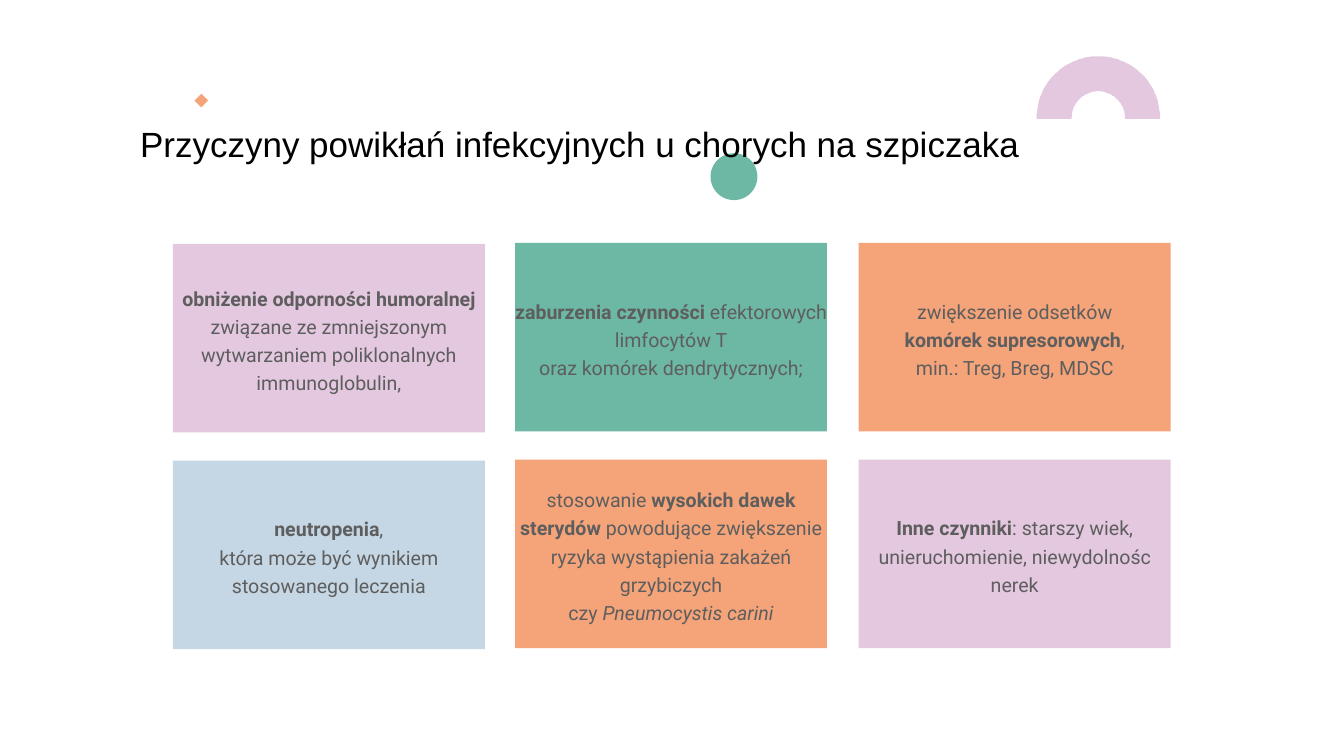
import math

import pptx
import pptx.dml.color
import pptx.enum.shapes
import pptx.enum.text
import pptx.util

PX = 9144

THEME = {
    "pink": "E4C8E0", "green": "6DB8A4", "orange": "F5A479", "blue": "C5D6E4",
    "title": "000000", "text": "5E5E5E",
    "title_font": "Arial", "card_font": "Roboto",
    "title_size": 50, "card_size": 28,
}

TITLE = "Przyczyny powikłań infekcyjnych u chorych na szpiczaka"

CARDS = [
    ("pink", [[("obniżenie odporności humoralnej ", "b"),
               ("związane ze zmniejszonym wytwarzaniem poliklonalnych", "")],
              [("immunoglobulin,", "")]]),
    ("green", [[("zaburzenia czynności ", "b"), ("efektorowych limfocytów T", "")],
               [("oraz komórek dendrytycznych;", "")]]),
    ("orange", [[("zwiększenie odsetków\n", ""), ("komórek supresorowych", "b"),
                 (",\nmin.: Treg, Breg, MDSC", "")]]),
    ("blue", [[("neutropenia", "b"),
               (",\nktóra może być wynikiem stosowanego leczenia", "")]]),
    ("orange", [[("stosowanie ", ""), ("wysokich dawek sterydów ", "b"),
                 ("powodujące zwiększenie ryzyka wystąpienia zakażeń grzybiczych", "")],
                [("czy ", ""), ("Pneumocystis carini", "i")]]),
    ("pink", [[("Inne czynniki", "b"),
               (": starszy wiek, unieruchomienie, niewydolnośc nerek", "")]]),
]

COLUMNS = [(343, 2), (1022, 0), (1704, 0)]
ROWS = [482, 912]
CARD_W, CARD_H = 619, 374
ARCH = {"cx": 2179.5, "cy": 2 * 117, "outer": 122.5, "inner": 53, "foot": 2}

SHAPES = pptx.enum.shapes.MSO_SHAPE
ALIGN = pptx.enum.text.PP_ALIGN


def rgb(name):
    return pptx.dml.color.RGBColor.from_string(THEME[name])


def paint(sp, color):
    sp.shadow.inherit = False
    sp.fill.solid()
    sp.fill.fore_color.rgb = rgb(color)
    sp.line.fill.background()


def add_shape(s, kind, x, y, w, h, color):
    sp = s.shapes.add_shape(kind, x * PX, y * PX, w * PX, h * PX)
    paint(sp, color)
    return sp


def add_arch(s, cx, cy, outer, inner, foot, color):
    def arc(radius):
        points = [(cx + radius * math.cos(math.radians(a)),
                   cy - radius * math.sin(math.radians(a))) for a in range(180, -1, -3)]
        return [(cx - radius, cy + foot), *points, (cx + radius, cy + foot)]

    points = arc(outer) + arc(inner)[::-1]
    builder = s.shapes.build_freeform(*points[0], scale=PX)
    builder.add_line_segments(points[1:], close=True)
    paint(builder.convert_to_shape(), color)


def write(tf, paragraphs, *, font, size, color, align, spacing=1.0):
    tf.word_wrap = True
    tf.auto_size = pptx.enum.text.MSO_AUTO_SIZE.NONE
    tf.vertical_anchor = pptx.enum.text.MSO_ANCHOR.MIDDLE
    tf.margin_left = tf.margin_right = tf.margin_top = tf.margin_bottom = 0
    for i, runs in enumerate(paragraphs):
        p = tf.add_paragraph() if i else tf.paragraphs[0]
        p.alignment = align
        p.line_spacing = spacing
        p.font.size = pptx.util.Pt(size)
        for text, style in runs:
            for j, line in enumerate(text.split("\n")):
                if j:
                    p.add_line_break()
                if line:
                    r = p.add_run()
                    r.text = line
                    r.font.name = font
                    r.font.size = pptx.util.Pt(size)
                    r.font.color.rgb = rgb(color)
                    r.font.bold = style == "b"
                    r.font.italic = style == "i"


def main():
    prs = pptx.Presentation()
    prs.slide_width, prs.slide_height = 2667 * PX, 1500 * PX
    s = prs.slides.add_slide(prs.slide_layouts[5])

    add_arch(s, **ARCH, color="pink")
    add_shape(s, SHAPES.OVAL, 1410, 304, 93, 93, "green")
    add_shape(s, SHAPES.DIAMOND, 386, 186, 27, 27, "orange")

    title = s.shapes.title
    title.element.getparent().append(title.element)
    title.left, title.top, title.width, title.height = (v * PX for v in (278, 216, 2111, 137))
    write(title.text_frame, [[(TITLE, "")]], font=THEME["title_font"],
          size=THEME["title_size"], color="title", align=ALIGN.LEFT)

    for i, (color, paragraphs) in enumerate(CARDS):
        row, column = divmod(i, len(COLUMNS))
        x, drop = COLUMNS[column]
        sp = add_shape(s, SHAPES.RECTANGLE, x, ROWS[row] + drop, CARD_W, CARD_H, color)
        write(sp.text_frame, paragraphs, font=THEME["card_font"], size=THEME["card_size"],
              color="text", align=ALIGN.CENTER, spacing=1.2)

    prs.save("out.pptx")


if __name__ == "__main__":
    main()
